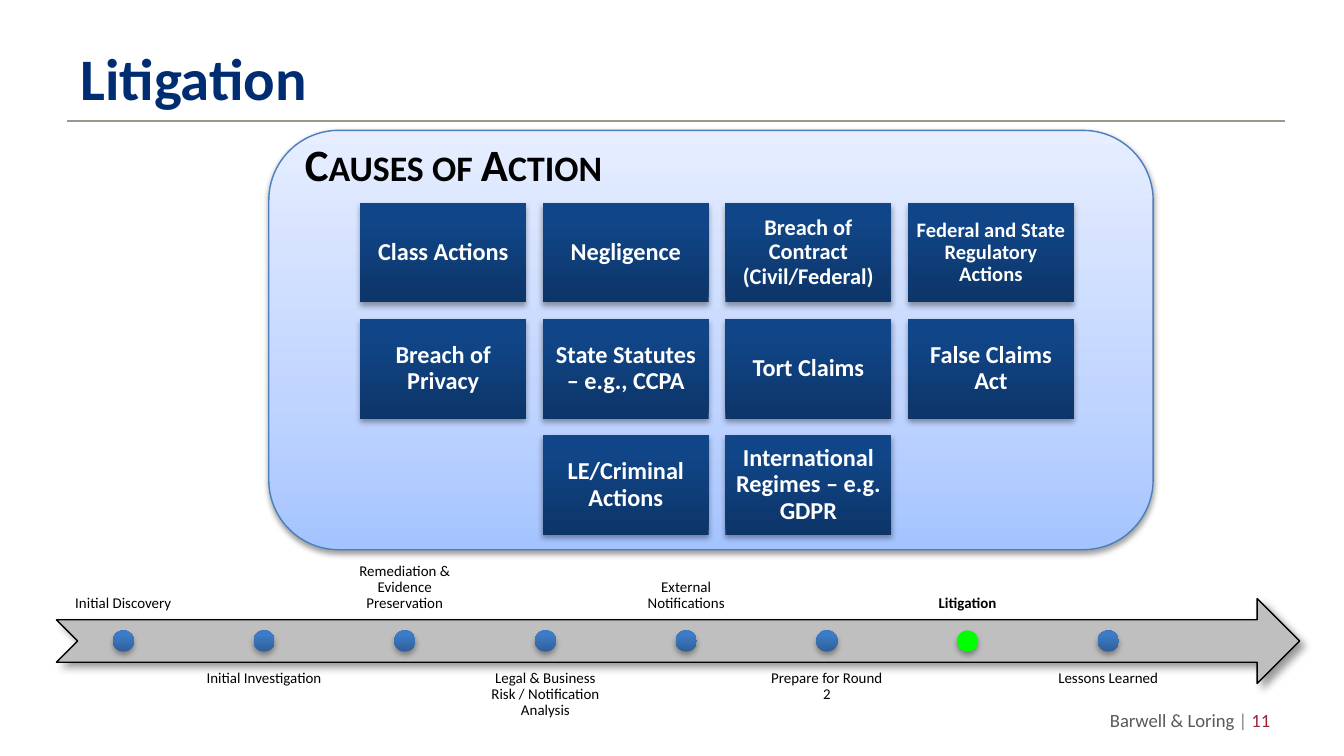
from collections import namedtuple

from lxml import etree
from pptx import Presentation
from pptx.dml.color import RGBColor
from pptx.enum.shapes import MSO_CONNECTOR, MSO_SHAPE
from pptx.enum.text import MSO_ANCHOR, MSO_AUTO_SIZE, PP_ALIGN
from pptx.oxml.ns import qn
from pptx.util import Inches, Pt

RECTANGLE, ROUNDED = MSO_SHAPE.RECTANGLE, MSO_SHAPE.ROUNDED_RECTANGLE
OVAL, ARROW = MSO_SHAPE.OVAL, MSO_SHAPE.NOTCHED_RIGHT_ARROW
STRAIGHT, NO_AUTOFIT = MSO_CONNECTOR.STRAIGHT, MSO_AUTO_SIZE.NONE
TOP, MIDDLE, BOTTOM = MSO_ANCHOR.TOP, MSO_ANCHOR.MIDDLE, MSO_ANCHOR.BOTTOM
LEFT, CENTER, RIGHT = PP_ALIGN.LEFT, PP_ALIGN.CENTER, PP_ALIGN.RIGHT

FONT = "Calibri"
NAVY = RGBColor(0x00, 0x2D, 0x72)
RULE = RGBColor(0x9D, 0x96, 0x8D)
BLACK = RGBColor(0x00, 0x00, 0x00)
WHITE = RGBColor(0xFF, 0xFF, 0xFF)
DARK_GRAY = RGBColor(0x59, 0x59, 0x59)
MID_GRAY = RGBColor(0x80, 0x80, 0x80)
ARROW_GRAY = RGBColor(0xBF, 0xBF, 0xBF)
CRIMSON = RGBColor(0x9D, 0x22, 0x35)
GREEN = RGBColor(0x00, 0xFF, 0x00)
PANEL_LINE = RGBColor(0x4B, 0x7E, 0xBC)

# Gradient stops run from the bottom of a shape to its top
MARKER_BLUE = [(0, RGBColor(0x2F, 0x5F, 0x99)), (80, RGBColor(0x3D, 0x7C, 0xC7)),
               (100, RGBColor(0x3A, 0x7C, 0xCB))]
PANEL_BLUE = [(0, RGBColor(0xA4, 0xC4, 0xFF)), (35, RGBColor(0xBF, 0xD4, 0xFF)),
              (100, RGBColor(0xE6, 0xEE, 0xFF))]
CARD_BLUE = [(0, RGBColor(0x0D, 0x35, 0x68)), (80, RGBColor(0x10, 0x45, 0x87)),
             (100, RGBColor(0x0E, 0x45, 0x8A))]

# Shadows: opacity %, blur pt, distance pt, direction in degrees
SOFT_SHADOW = (35, 3.1, 1.8, 90)
PANEL_SHADOW = (38, 3.1, 1.6, 90)
ARROW_SHADOW = (40, 4, 3, 45)

CAUSES = [
    [("Class Actions", 13), ("Negligence", 13), ("Breach of Contract (Civil/Federal)", 12),
     ("Federal and State Regulatory Actions", 11)],
    [("Breach of Privacy", 13), ("State Statutes – e.g., CCPA", 13), ("Tort Claims", 13),
     ("False Claims Act", 13)],
    [("LE/Criminal Actions", 13), ("International Regimes – e.g. GDPR", 13)],
]
STAGES = ["Initial Discovery", "Initial Investigation", "Remediation & Evidence Preservation",
          "Legal & Business Risk / Notification Analysis", "External Notifications",
          "Prepare for Round 2", "Litigation", "Lessons Learned"]
CURRENT_STAGE = "Litigation"

Box = namedtuple("Box", "left top width height")


def inches(box):
    return [Inches(length) for length in box]


def set_gradient(shape, stops):
    shape.fill.gradient()
    shape.fill.gradient_angle = 90
    stop_list = shape.element.spPr.find(".//" + qn("a:gsLst"))
    for stop in list(stop_list):
        stop_list.remove(stop)
    for position, color in stops:
        stop = etree.SubElement(stop_list, qn("a:gs"), pos=str(position * 1000))
        etree.SubElement(stop, qn("a:srgbClr"), val=str(color))


def set_shadow(shape, opacity, blur, distance, direction):
    shape.shadow.inherit = False
    effects = shape.element.spPr.find(qn("a:effectLst"))
    shadow = etree.SubElement(effects, qn("a:outerShdw"), blurRad=str(Pt(blur)),
                              dist=str(Pt(distance)), dir=str(direction * 60000),
                              rotWithShape="0")
    color = etree.SubElement(shadow, qn("a:srgbClr"), val=str(BLACK))
    etree.SubElement(color, qn("a:alpha"), val=str(opacity * 1000))


def add_shape(slide, kind, box, fill, shadow, line=None):
    shape = slide.shapes.add_shape(kind, *inches(box))
    if isinstance(fill, list):
        set_gradient(shape, fill)
    else:
        shape.fill.solid()
        shape.fill.fore_color.rgb = fill
    if line is None:
        shape.line.fill.background()
    else:
        shape.line.color.rgb = line
        shape.line.width = Pt(0.75)
    set_shadow(shape, *shadow)
    return shape


def write(shape, runs, size, bold=False, align=LEFT, anchor=MIDDLE, inset=None, spacing=None):
    """Fill a shape with one paragraph of (text, color) runs."""
    frame = shape.text_frame
    frame.word_wrap, frame.auto_size, frame.vertical_anchor = True, NO_AUTOFIT, anchor
    if inset is not None:
        for side in ("left", "top", "right", "bottom"):
            setattr(frame, f"margin_{side}", Inches(inset))
    paragraph = frame.paragraphs[0]
    paragraph.alignment, paragraph.line_spacing = align, spacing
    for text, color in runs:
        run = paragraph.add_run()
        run.text = text
        run.font.color.rgb = color
        for name, value in {"name": FONT, "size": Pt(size), "bold": bold}.items():
            setattr(run.font, name, value)


def add_text(slide, box, runs, size, **formats):
    text_box = slide.shapes.add_textbox(*inches(box))
    write(text_box, runs, size, **formats)
    return text_box


def add_header(slide, box):
    title = slide.shapes.title
    title.left, title.top, title.width, title.height = inches(box)
    write(title, [("Litigation", NAVY)], 31.5, bold=True)
    rule_y = box.top + box.height - 0.01
    rule = slide.shapes.add_connector(STRAIGHT, Inches(box.left), Inches(rule_y),
                                      Inches(box.left + box.width - 0.02), Inches(rule_y))
    rule.line.color.rgb = RULE
    rule.line.width = Pt(0.75)
    etree.SubElement(rule.element.spPr, qn("a:effectLst"))


def add_footer(slide, box):
    add_text(slide, box, [("Barwell & Loring ", DARK_GRAY), ("| ", MID_GRAY), ("11", CRIMSON)],
             10, align=RIGHT)


def add_timeline(slide, box):
    """Arrow in the middle band, labels alternating above and below it."""
    left, top, width, height = box
    band = 0.4 * height
    add_shape(slide, ARROW, Box(left, top + 0.3 * height, width, band),
              ARROW_GRAY, ARROW_SHADOW, BLACK)
    # Eight labels and seven gaps of 5 % share 90 % of the arrow
    label_width = 0.9 * width / (len(STAGES) + 0.05 * (len(STAGES) - 1))
    diameter = 0.1 * height
    for index, stage in enumerate(STAGES):
        above, current = index % 2 == 0, stage == CURRENT_STAGE
        x = left + 1.05 * label_width * index
        y = top if above else top + 0.6 * height
        add_text(slide, Box(x, y, label_width, band), [(stage, BLACK)], 8, bold=current,
                 align=CENTER, anchor=BOTTOM if above else TOP, inset=0.06, spacing=0.9)
        add_shape(slide, OVAL, Box(x + (label_width - diameter) / 2, top + 0.45 * height,
                                   diameter, diameter),
                  GREEN if current else MARKER_BLUE, SOFT_SHADOW)


def add_cards(slide, box):
    """Rows of cards with gaps of a tenth of a card; short rows are centred."""
    columns = max(len(row) for row in CAUSES)
    card_width = box.width / (columns + 0.1 * (columns - 1))
    card_height, gap = 0.6 * card_width, 0.1 * card_width
    for row_index, row in enumerate(CAUSES):
        y = box.top + row_index * (card_height + gap)
        for column, (cause, size) in enumerate(row, start=(columns - len(row)) // 2):
            x = box.left + column * (card_width + gap)
            card = add_shape(slide, RECTANGLE, Box(x, y, card_width, card_height),
                             CARD_BLUE, SOFT_SHADOW)
            write(card, [(cause, WHITE)], size, bold=True, align=CENTER, inset=0.05, spacing=0.9)


def add_causes_panel(slide, box):
    left, top, width, height = box
    add_shape(slide, ROUNDED, box, PANEL_BLUE, PANEL_SHADOW, PANEL_LINE)
    add_cards(slide, Box(left + 0.68, top + 0.54, width - 1.27, height - 0.65))
    heading = add_text(slide, Box(left + 0.17, top - 0.07, width - 0.42, 0.64),
                       [("Causes of Action", BLACK)], 24, bold=True)
    heading.text_frame.paragraphs[0].runs[0].font._element.set("cap", "small")


def main():
    presentation = Presentation()
    presentation.slide_width = Inches(10)
    presentation.slide_height = presentation.slide_width * 9 // 16
    slide = presentation.slides.add_slide(presentation.slide_layouts[5])
    add_header(slide, Box(0.5, 0.23, 9.08, 0.68))
    add_footer(slide, Box(7.22, 5.22, 2.33, 0.27))
    add_timeline(slide, Box(0.42, 3.98, 9.25, 1.58))
    add_causes_panel(slide, Box(2, 0.97, 6.58, 3.12))
    presentation.save("out.pptx")


if __name__ == "__main__":
    main()
